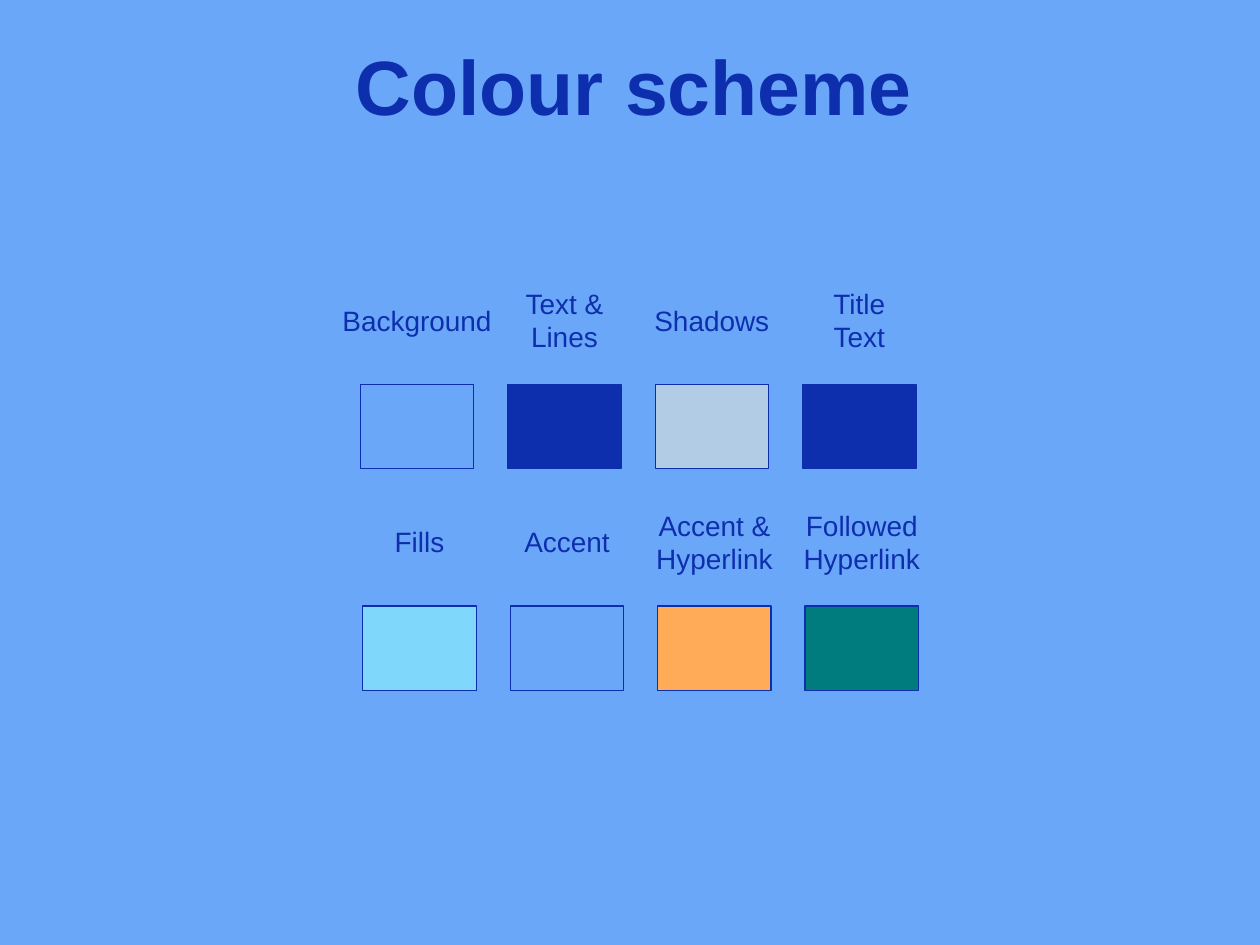
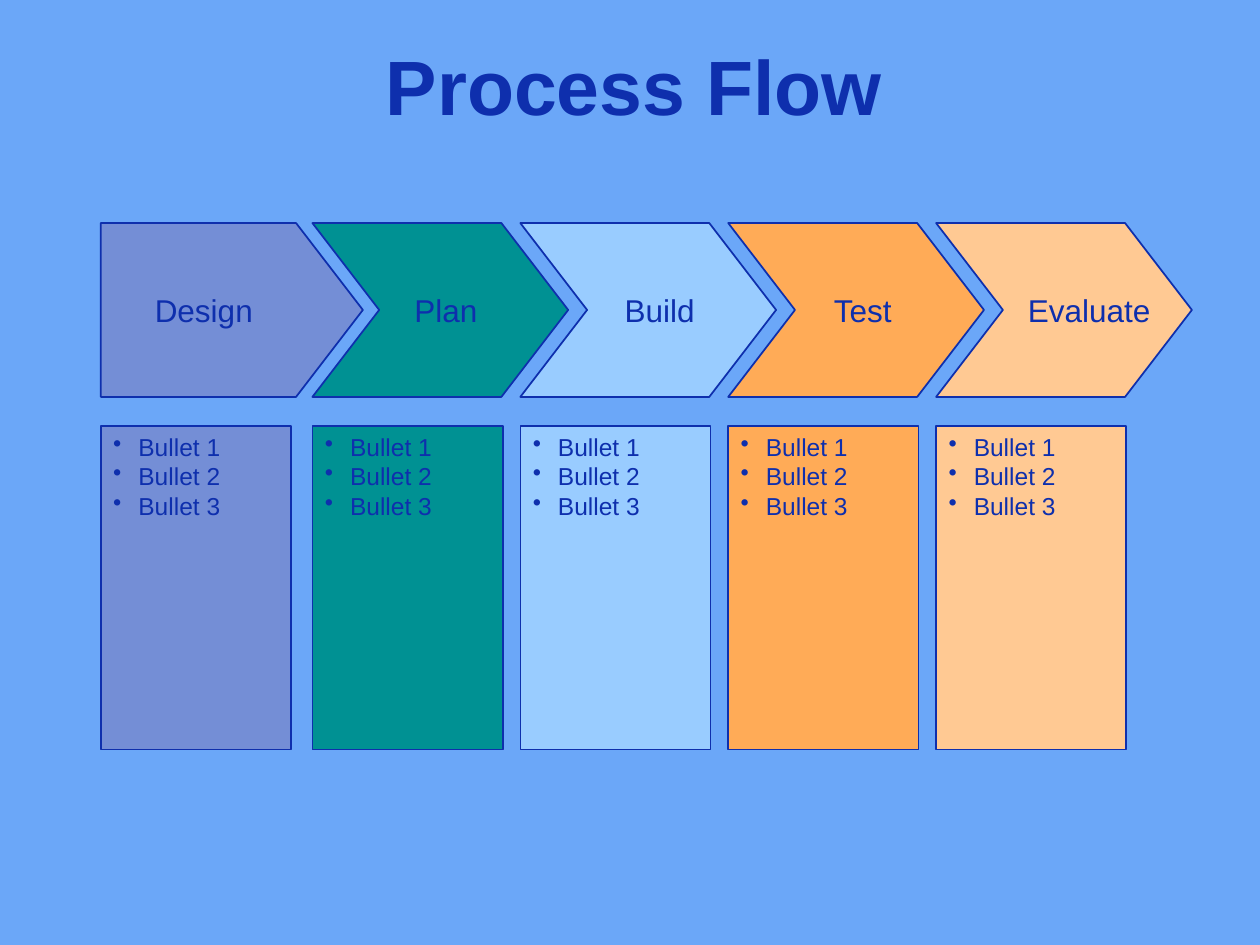
import dataclasses
import typing

import pptx
import pptx.dml.color
import pptx.enum.shapes
import pptx.enum.text
import pptx.oxml
import pptx.oxml.ns
import pptx.util

Inches = pptx.util.Inches
Pt = pptx.util.Pt
RGBColor = pptx.dml.color.RGBColor
Align = pptx.enum.text.PP_ALIGN
Anchor = pptx.enum.text.MSO_ANCHOR

SKY = RGBColor(0x6B, 0xA7, 0xF8)
NAVY = RGBColor(0x0E, 0x2F, 0xAD)
MIST = RGBColor(0xB3, 0xCC, 0xE6)
AQUA = RGBColor(0x7F, 0xD7, 0xFC)
ORANGE = RGBColor(0xFF, 0xAB, 0x57)
DEEP_TEAL = RGBColor(0x00, 0x7B, 0x7E)
PERIWINKLE = RGBColor(0x74, 0x8E, 0xD6)
TEAL = RGBColor(0x00, 0x91, 0x93)
PALE_BLUE = RGBColor(0x99, 0xCC, 0xFF)
PEACH = RGBColor(0xFF, 0xC9, 0x93)

TITLE_FORMAT = {"name": "Arial", "size": Pt(44), "bold": True}
LABEL_FORMAT = {"name": "Arial", "size": Pt(16), "bold": False}
STAGE_FORMAT = {"name": "Arial", "size": Pt(18), "bold": False}
BULLET_FORMAT = {"name": "Arial", "size": Pt(14), "bold": False}

SWATCH_PITCH = 1.17
SWATCH_WIDTH = 0.9
SWATCH_HEIGHT = 0.67
LABEL_WIDTH = 1.4
LABEL_HEIGHT = 0.64

CHEVRON_TOP = 1.77
CHEVRON_HEIGHT = 1.38
CHEVRON_POINT = 0.53
PANEL_TOP = 3.38
PANEL_WIDTH = 1.51
PANEL_HEIGHT = 2.57
BULLETS = ["Bullet 1", "Bullet 2", "Bullet 3"]


@dataclasses.dataclass
class Area:
    left: float
    top: float
    width: float
    height: float

    def lengths(self) -> list[int]:
        return [Inches(side) for side in dataclasses.astuple(self)]


@dataclasses.dataclass
class Swatch:
    label: str
    fill: RGBColor


@dataclasses.dataclass
class SwatchRow:
    left: float
    label_top: float
    swatch_top: float
    swatches: list[Swatch]


@dataclasses.dataclass
class Stage:
    name: str
    fill: RGBColor
    left: float
    body: float
    label_left: float
    label_width: float


SWATCH_ROWS = [
    SwatchRow(2.86, 2.22, 3.05, [
        Swatch("Background", SKY),
        Swatch("Text &\nLines", NAVY),
        Swatch("Shadows", MIST),
        Swatch("Title\nText", NAVY),
    ]),
    SwatchRow(2.88, 3.98, 4.81, [
        Swatch("Fills", AQUA),
        Swatch("Accent", SKY),
        Swatch("Accent &\nHyperlink", ORANGE),
        Swatch("Followed\nHyperlink", DEEP_TEAL),
    ]),
]

STAGES = [
    Stage("Design", PERIWINKLE, 0.8, 1.55, 1.13, 0.98),
    Stage("Plan", TEAL, 2.48, 1.5, 3.19, 0.7),
    Stage("Build", PALE_BLUE, 4.13, 1.5, 4.86, 0.76),
    Stage("Test", ORANGE, 5.78, 1.5, 6.52, 0.69),
    Stage("Evaluate", PEACH, 7.43, 1.5, 8.06, 1.17),
]


def add_bullet(para: typing.Any) -> None:
    properties = para._p.get_or_add_pPr()
    properties.set("marL", str(Inches(0.2)))
    properties.set("indent", str(-Inches(0.2)))
    bullet = pptx.oxml.parse_xml(
        f'<a:buChar {pptx.oxml.ns.nsdecls("a")} char="•"/>'
    )
    properties.append(bullet)


def write_lines(box: typing.Any, lines: list[str], text_format: dict,
                align: Align, anchor: Anchor, wrap: bool,
                bulleted: bool = False) -> None:
    frame = box.text_frame
    frame.word_wrap = wrap
    frame.vertical_anchor = anchor
    for index, line in enumerate(lines):
        para = frame.paragraphs[0] if index == 0 else frame.add_paragraph()
        para.alignment = align
        if bulleted:
            add_bullet(para)
        span = para.add_run()
        span.text = line
        for name, value in text_format.items():
            setattr(span.font, name, value)
        span.font.color.rgb = NAVY


def paint(shape: typing.Any, fill: RGBColor, line_width: float) -> None:
    shape.shadow.inherit = False
    shape.fill.solid()
    shape.fill.fore_color.rgb = fill
    shape.line.color.rgb = NAVY
    shape.line.width = Pt(line_width)


def add_rectangle(page: typing.Any, area: Area, fill: RGBColor,
                  line_width: float) -> typing.Any:
    box = page.shapes.add_shape(
        pptx.enum.shapes.MSO_SHAPE.RECTANGLE, *area.lengths())
    paint(box, fill, line_width)
    return box


def add_label(page: typing.Any, area: Area, text: str, text_format: dict,
              align: Align, anchor: Anchor, wrap: bool = False) -> None:
    box = page.shapes.add_textbox(*area.lengths())
    write_lines(box, text.split("\n"), text_format, align, anchor, wrap)


def add_page(deck: typing.Any, title: str) -> typing.Any:
    page = deck.slides.add_slide(deck.slide_layouts[6])
    page.background.fill.solid()
    page.background.fill.fore_color.rgb = SKY
    add_label(page, Area(0.5, 0.28, 9.07, 0.79), title, TITLE_FORMAT,
              Align.CENTER, Anchor.MIDDLE, wrap=True)
    return page


def add_swatch_row(page: typing.Any, row: SwatchRow) -> None:
    for index, swatch in enumerate(row.swatches):
        left = row.left + index * SWATCH_PITCH
        add_rectangle(
            page, Area(left, row.swatch_top, SWATCH_WIDTH, SWATCH_HEIGHT),
            swatch.fill, 0.75)
        label_left = left + (SWATCH_WIDTH - LABEL_WIDTH) / 2
        add_label(
            page, Area(label_left, row.label_top, LABEL_WIDTH, LABEL_HEIGHT),
            swatch.label, LABEL_FORMAT, Align.CENTER, Anchor.MIDDLE)


def add_chevron(page: typing.Any, stage: Stage, notched: bool) -> None:
    shoulder = stage.left + stage.body
    middle = CHEVRON_TOP + CHEVRON_HEIGHT / 2
    bottom = CHEVRON_TOP + CHEVRON_HEIGHT
    corners = [
        (shoulder, CHEVRON_TOP),
        (shoulder + CHEVRON_POINT, middle),
        (shoulder, bottom),
        (stage.left, bottom),
    ]
    if notched:
        corners.append((stage.left + CHEVRON_POINT, middle))
    outline = page.shapes.build_freeform(
        Inches(stage.left), Inches(CHEVRON_TOP))
    outline.add_line_segments(
        [(Inches(across), Inches(down)) for across, down in corners])
    paint(outline.convert_to_shape(), stage.fill, 1)


def add_stage(page: typing.Any, stage: Stage, notched: bool) -> None:
    panel = add_rectangle(
        page, Area(stage.left, PANEL_TOP, PANEL_WIDTH, PANEL_HEIGHT),
        stage.fill, 1)
    write_lines(panel, BULLETS, BULLET_FORMAT, Align.LEFT, Anchor.TOP,
                wrap=True, bulleted=True)
    add_chevron(page, stage, notched)
    add_label(page, Area(stage.label_left, 2.26, stage.label_width, 0.4),
              stage.name, STAGE_FORMAT, Align.LEFT, Anchor.TOP)


def main() -> None:
    deck = pptx.Presentation()
    deck.slide_width = Inches(10)
    deck.slide_height = Inches(7.5)

    scheme_page = add_page(deck, "Colour scheme")
    for row in SWATCH_ROWS:
        add_swatch_row(scheme_page, row)

    flow_page = add_page(deck, "Process Flow")
    for index, stage in enumerate(STAGES):
        add_stage(flow_page, stage, notched=index > 0)

    deck.save("out.pptx")


if __name__ == "__main__":
    main()
